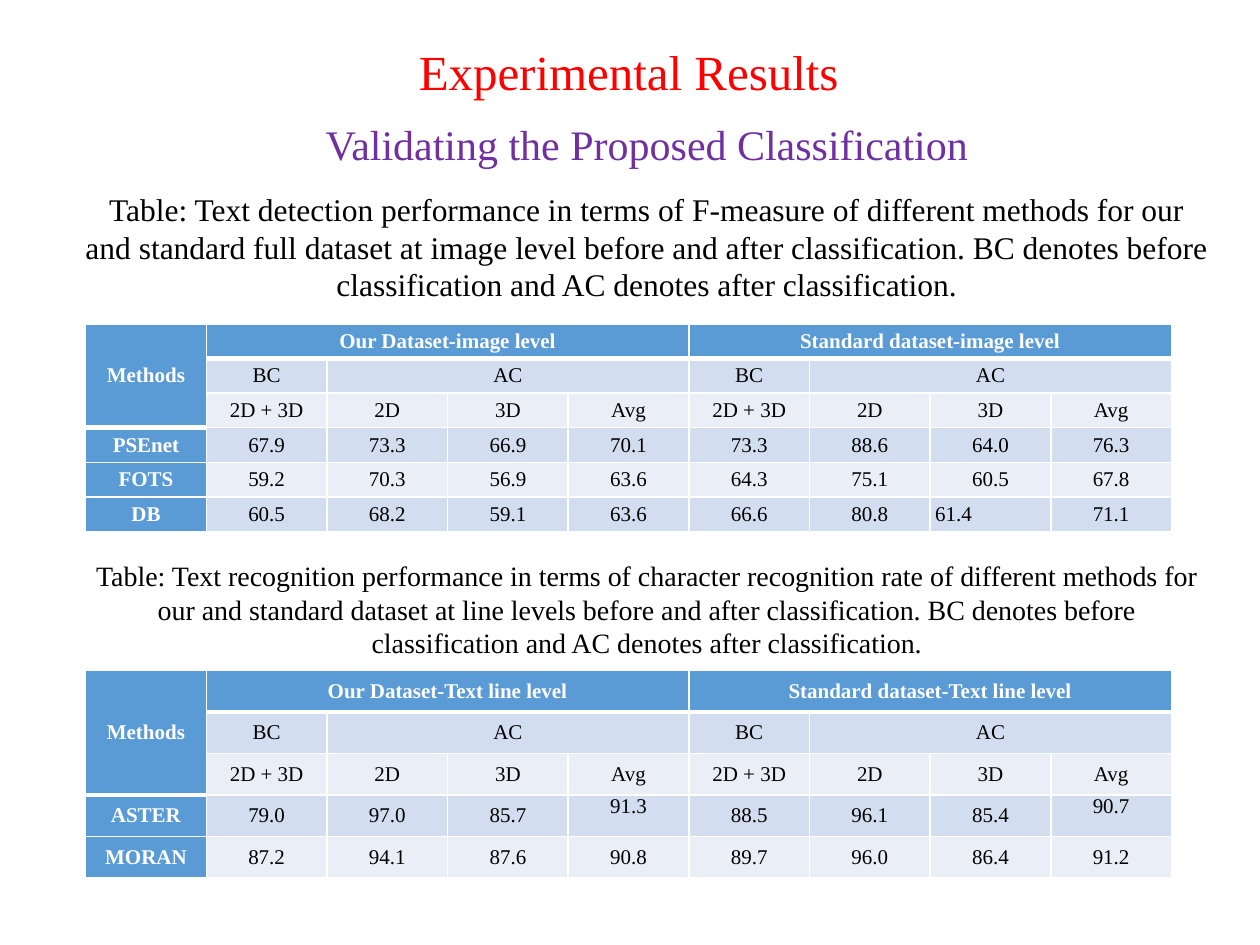
from pptx import Presentation
from pptx.dml.color import RGBColor
from pptx.enum.text import MSO_ANCHOR, PP_ALIGN
from pptx.oxml import parse_xml
from pptx.oxml.ns import nsdecls
from pptx.util import Inches, Pt

COLORS = {
    "title": "FF0000",
    "subtitle": "7030A0",
    "text": "000000",
    "white": "FFFFFF",
    "header": "5B9BD5",
    "dark_band": "D2DEEF",
    "light_band": "EAEFF7",
}
TABLE_LEFT, TABLE_WIDTH, TABLE_HEIGHT = 0.68, 8.62, 1.65
GROUP_COLUMNS = (1, 5)
HEADER_ROWS = [
    ["BC", "AC", "", ""] * 2,
    ["2D + 3D", "2D", "3D", "Avg"] * 2,
]


class ResultsSlide:
    font = "Times New Roman"

    def __init__(self, slide):
        self.slide = slide

    def style(self, paragraph, size, color, bold=False, align=PP_ALIGN.CENTER):
        paragraph.alignment = align
        for run in paragraph.runs:
            run.font.name = self.font
            run.font.size = Pt(size)
            run.font.bold = bold
            run.font.color.rgb = RGBColor.from_string(COLORS[color])

    def text(self, left, top, width, height, lines, spacing, anchor):
        """Add a text box; each line is (wording, size, color, points before)."""
        box = self.slide.shapes.add_textbox(
            Inches(left), Inches(top), Inches(width), Inches(height))
        frame = box.text_frame
        frame.word_wrap = True
        frame.vertical_anchor = anchor
        frame.text = "\n".join(line[0] for line in lines)
        for paragraph, (_, size, color, before) in zip(frame.paragraphs, lines):
            self.style(paragraph, size, color)
            paragraph.line_spacing = spacing
            paragraph.space_before = Pt(before)
            paragraph.space_after = Pt(6)

    def borders(self, cell, row, column):
        """Draw thin white edges, with a thick one under the header cells."""
        def edge_below(r):
            return 3 if r == 0 or (r == 2 and column == 0) else 1

        widths = {"L": 1, "R": 1, "T": edge_below(row - 1), "B": edge_below(row)}
        properties = cell._tc.get_or_add_tcPr()
        for side, width in widths.items():
            properties.append(parse_xml(
                f'<a:ln{side} {nsdecls("a")} w="{Pt(width)}"><a:solidFill>'
                f'<a:srgbClr val="{COLORS["white"]}"/></a:solidFill></a:ln{side}>'))

    def table(self, top, groups, results, margin, justified=(), raised=()):
        """Add a results table; justified and raised hold (row, column) exceptions."""
        rows = [["Methods", groups[0], "", "", "", groups[1], "", "", ""]]
        rows += [[""] + header for header in HEADER_ROWS]
        rows += [[method] + values.split() for method, values in results.items()]
        table = self.slide.shapes.add_table(
            len(rows), len(rows[0]), Inches(TABLE_LEFT), Inches(top),
            Inches(TABLE_WIDTH), Inches(TABLE_HEIGHT)).table
        for table_row in table.rows:
            table_row.height = Inches(TABLE_HEIGHT / len(rows))

        for r, row in enumerate(rows):
            for c, wording in enumerate(row):
                cell = table.cell(r, c)
                is_header = r == 0 or c == 0
                band = "dark_band" if r % 2 else "light_band"
                self.borders(cell, r, c)
                cell.fill.solid()
                cell.fill.fore_color.rgb = RGBColor.from_string(
                    COLORS["header" if is_header else band])
                cell.margin_left = cell.margin_right = Inches(margin)
                cell.margin_top = cell.margin_bottom = 0
                cell.vertical_anchor = (
                    MSO_ANCHOR.TOP if (r, c) in raised else MSO_ANCHOR.MIDDLE)
                cell.text_frame.text = wording
                self.style(
                    cell.text_frame.paragraphs[0], 12,
                    "white" if is_header else "text", is_header,
                    PP_ALIGN.JUSTIFY if (r, c) in justified else PP_ALIGN.CENTER)

        table.cell(0, 0).merge(table.cell(2, 0))
        for first in GROUP_COLUMNS:
            table.cell(0, first).merge(table.cell(0, first + 3))
            table.cell(1, first + 1).merge(table.cell(1, first + 3))


def main():
    presentation = Presentation()
    presentation.slide_width = Inches(10)
    presentation.slide_height = Inches(7.5)
    results = ResultsSlide(
        presentation.slides.add_slide(presentation.slide_layouts[6]))

    results.text(0.68, 0.28, 8.62, 0.62,
                 [("Experimental Results", 28, "title", 0)], 0.9, MSO_ANCHOR.MIDDLE)
    results.text(0.57, 0.89, 9.13, 6.39, [
        ("Validating the Proposed Classification", 24, "subtitle", 0),
        ("Table: Text detection performance in terms of F-measure of different "
         "methods for our and standard full dataset at image level before and after "
         "classification. BC denotes before classification and AC denotes after "
         "classification.", 18, "text", 6),
        ("Table: Text recognition performance in terms of character recognition rate "
         "of different methods for our and standard dataset at line levels before and "
         "after classification. BC denotes before classification and AC denotes after "
         "classification.", 16, "text", 140),
    ], 1.0, MSO_ANCHOR.TOP)

    results.table(
        2.57, ("Our Dataset-image level", "Standard dataset-image level"), {
            "PSEnet": "67.9 73.3 66.9 70.1 73.3 88.6 64.0 76.3",
            "FOTS": "59.2 70.3 56.9 63.6 64.3 75.1 60.5 67.8",
            "DB": "60.5 68.2 59.1 63.6 66.6 80.8 61.4 71.1",
        }, 0.04, justified=[(5, 7)])
    results.table(
        5.32, ("Our Dataset-Text line level", "Standard dataset-Text line level"), {
            "ASTER": "79.0 97.0 85.7 91.3 88.5 96.1 85.4 90.7",
            "MORAN": "87.2 94.1 87.6 90.8 89.7 96.0 86.4 91.2",
        }, 0.03, raised=[(3, 4), (3, 8)])
    presentation.save("out.pptx")


if __name__ == "__main__":
    main()
